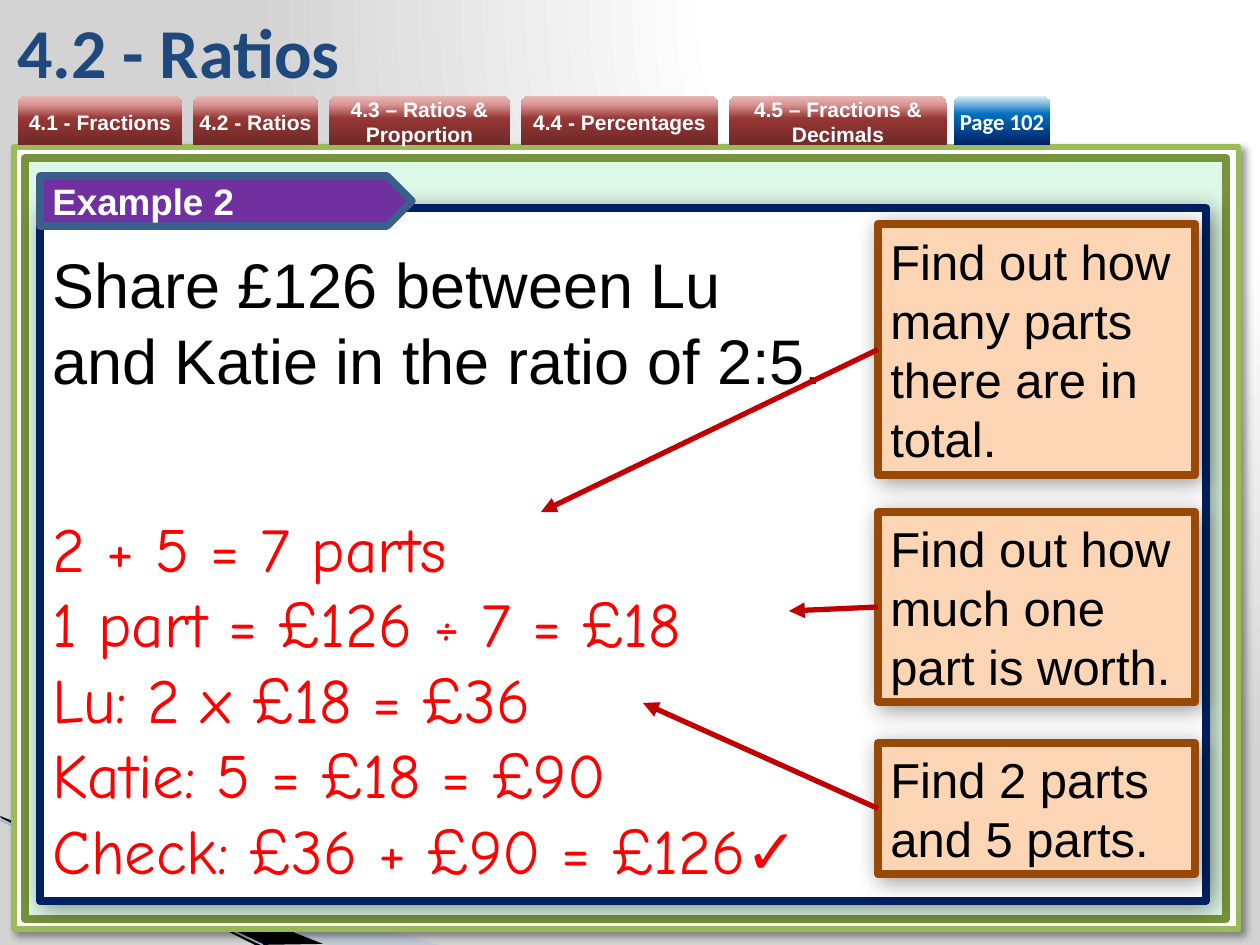
import lxml.etree
import pptx
import pptx.dml.color
import pptx.enum.shapes
import pptx.enum.text
import pptx.oxml
import pptx.oxml.ns
import pptx.util

SCALE = 914400 / 126
SHAPES = pptx.enum.shapes.MSO_SHAPE
ALIGN = pptx.enum.text.PP_ALIGN
ANCHOR = pptx.enum.text.MSO_ANCHOR
COLOURS = {
    "white": "FFFFFF", "black": "000000", "grey": "D3D3D3", "haze": "A7B9DB",
    "streak": "9EB3D6", "green": "9BBB59", "olive": "77933C", "mint": "DFF9E8",
    "title": "1F497D", "navy": "002060", "purple": "7030A0", "steel": "3A5F8C",
    "peach": "FCD5B5", "brown": "984807", "arrow": "C00000", "answer": "FF0000",
}
BACKGROUND_STOPS = [(0, "FFFFFF"), (40, "FFFFFF"), (100, "D3D3D3")]
TAB_STOPS = [(0, "6F2927"), (54, "953735"), (83, "D99694"), (100, "E6B9B8")]
PAGE_STOPS = [(0, "002060"), (63, "0070C0"), (100, "DBEEF4")]
UPWARD = '<a:lin ang="16200000" scaled="0"/>'
CORNER_GLOW = '<a:path path="circle"><a:fillToRect l="65000" t="0" r="0" b="98000"/></a:path>'
TABS = [("4.1 - Fractions", 164), ("4.2 - Ratios", 125), ("4.3 – Ratios & Proportion", 181),
        ("4.4 - Percentages", 197), ("4.5 – Fractions & Decimals", 218)]
TAB_LEFT, TAB_TOP, TAB_HEIGHT, TAB_GAP = 18, 96, 49, 11
QUESTION = "Share £126 between Lu\vand Katie in the ratio of 2:5."
WORKING = ["2 + 5 = 7 parts", "1 part = £126 ÷ 7 = £18", "Lu: 2 x £18 = £36",
           "Katie: 5 = £18 = £90", "Check: £36 + £90 = £126"]
CALLOUTS = [("Find out how many parts there are in total.", 224, 251, (541, 512)),
            ("Find out how much one part is worth.", 512, 190, (789, 611)),
            ("Find 2 parts and 5 parts.", 743, 131, (643, 703))]


def px(*values):
    """Turn pixel lengths into a list of EMU lengths."""
    return [pptx.util.Emu(round(value * SCALE)) for value in values]


def colour(name):
    """Look up a named colour."""
    return pptx.dml.color.RGBColor.from_string(COLOURS[name])


def xml(text):
    """Parse a DrawingML fragment whose root lacks its namespace."""
    head, tail = text.split(">", 1)
    return pptx.oxml.parse_xml(f"{head} {pptx.oxml.ns.nsdecls('a')}>{tail}")


def set_gradient(properties, stops, direction):
    """Replace the solid fill of a properties element by a gradient."""
    marks = "".join(f'<a:gs pos="{position * 1000}"><a:srgbClr val="{value}"/></a:gs>'
                    for position, value in stops)
    solid = properties.find(pptx.oxml.ns.qn("a:solidFill"))
    properties.replace(solid, xml(f"<a:gradFill><a:gsLst>{marks}</a:gsLst>{direction}</a:gradFill>"))


def set_shadow(shape, blur):
    """Give a shape a soft shadow to the lower right."""
    effects = shape._element.spPr.find(pptx.oxml.ns.qn("a:effectLst"))
    effects.append(xml(
        f'<a:outerShdw blurRad="{blur * 12700}" dist="38100" dir="2700000" algn="tl" rotWithShape="0">'
        f'<a:srgbClr val="{COLOURS["black"]}"><a:alpha val="40000"/></a:srgbClr></a:outerShdw>'))


def style_shape(shape, fill, line=None, width=4.33):
    """Set the fill and outline of a shape without the theme shadow."""
    shape.shadow.inherit = False
    shape.fill.solid()
    shape.fill.fore_color.rgb = colour(fill)
    if line:
        shape.line.color.rgb = colour(line)
        shape.line.width = pptx.util.Pt(width)
    else:
        shape.line.fill.background()


def add_block(slide, kind, box, fill, line=None, width=4.33, blur=0):
    """Add a filled preset shape."""
    shape = slide.shapes.add_shape(kind, *px(*box))
    style_shape(shape, fill, line, width)
    if blur:
        set_shadow(shape, blur)
    return shape


def style_paragraph(paragraph, font, size, ink, bold=False, align=ALIGN.LEFT):
    """Set the alignment and font of a paragraph."""
    paragraph.alignment = align
    paragraph.font.name = font
    paragraph.font.size = pptx.util.Pt(size)
    paragraph.font.bold = bold
    paragraph.font.color.rgb = colour(ink)


def write_text(shape, text, font, size, ink, bold=False, align=ALIGN.LEFT, anchor=ANCHOR.MIDDLE):
    """Write one paragraph into a shape."""
    frame = shape.text_frame
    frame.word_wrap = True
    frame.vertical_anchor = anchor
    frame.paragraphs[0].text = text
    style_paragraph(frame.paragraphs[0], font, size, ink, bold, align)


def add_line(slide, start, end, ink, width):
    """Add a straight line."""
    line = slide.shapes.add_connector(pptx.enum.shapes.MSO_CONNECTOR.STRAIGHT, *px(*start, *end))
    line.line.color.rgb = colour(ink)
    line.line.width = pptx.util.Pt(width)
    lxml.etree.SubElement(line._element.spPr, pptx.oxml.ns.qn("a:effectLst"))
    return line


def add_sliver(slide, points, fill):
    """Add a thin decorative outline in the lower left corner."""
    builder = slide.shapes.build_freeform(*points[0], scale=SCALE)
    builder.add_line_segments(points[1:], close=True)
    shape = builder.convert_to_shape()
    style_shape(shape, fill)
    return shape


def add_backdrop(slide):
    """Draw the background, the corner decoration and the two frames."""
    slide.background.fill.solid()
    properties = slide.element.find(".//" + pptx.oxml.ns.qn("p:bgPr"))
    set_gradient(properties, BACKGROUND_STOPS, CORNER_GLOW)
    haze = add_sliver(slide, [(0, 819), (440, 945), (326, 945), (0, 818)], "haze")
    haze_colour = haze._element.spPr.find(".//" + pptx.oxml.ns.qn("a:srgbClr"))
    haze_colour.append(xml('<a:alpha val="40000"></a:alpha>'))
    add_sliver(slide, [(0, 816), (323, 944), (255, 945), (1, 818)], "black")
    add_line(slide, (0, 820), (263, 945), "streak", 1)
    add_block(slide, SHAPES.RECTANGLE, (14, 147, 1225, 782), "white", "green", 3, blur=4)
    add_block(slide, SHAPES.RECTANGLE, (25, 158, 1201, 761), "mint", "olive")


def add_tab(slide, text, left, width, stops, font="Arial", size=12):
    """Add one navigation tab."""
    tab = add_block(slide, SHAPES.ROUND_2_SAME_RECTANGLE, (left, TAB_TOP, width, TAB_HEIGHT), "white")
    set_gradient(tab._element.spPr, stops, UPWARD)
    frame = tab.text_frame
    frame.margin_left = frame.margin_right = frame.margin_top = frame.margin_bottom = 0
    write_text(tab, text, font, size, "white", True, ALIGN.CENTER)


def add_example(slide):
    """Add the example panel with its question, working and label."""
    panel = add_block(slide, SHAPES.RECTANGLE, (40, 208, 1166, 693), "white", "navy", blur=13)
    panel.text_frame.margin_top = px(38)[0]
    write_text(panel, QUESTION, "Arial", 36, "black", anchor=ANCHOR.TOP)
    for index, step in enumerate(WORKING):
        paragraph = panel.text_frame.add_paragraph()
        paragraph.text = step
        style_paragraph(paragraph, "Comic Neue", 36, "answer")
        if index == 0:
            paragraph.space_before = pptx.util.Pt(64)
    tick = paragraph.add_run()
    tick.text = "✓"
    tick.font.bold = True
    label = add_block(slide, SHAPES.PENTAGON, (40, 176, 372, 50), "purple", "steel")
    write_text(label, "Example 2", "Arial", 21, "white", True)


def add_callouts(slide):
    """Add the hint boxes and their arrows."""
    boxes = []
    for text, top, height, target in CALLOUTS:
        box = add_block(slide, SHAPES.RECTANGLE, (878, top, 317, height), "peach", "brown", blur=13)
        write_text(box, text, "Arial", 28, "black")
        boxes.append((box, (878, top + height // 2), target))
    for box, start, target in boxes:
        arrow = add_line(slide, start, target, "arrow", 3)
        arrow.begin_connect(box, 1)
        arrow.line._get_or_add_ln().append(xml('<a:tailEnd type="triangle"></a:tailEnd>'))


def main():
    """Build the slide and save it."""
    presentation = pptx.Presentation()
    presentation.slide_width, presentation.slide_height = px(1260, 945)
    slide = presentation.slides.add_slide(presentation.slide_layouts[6])
    add_backdrop(slide)
    left = TAB_LEFT
    for text, width in TABS:
        add_tab(slide, text, left, width, TAB_STOPS)
        left += width + TAB_GAP
    title = slide.shapes.add_textbox(*px(5, 6, 1042, 89))
    write_text(title, "4.2 - Ratios", "Calibri", 40, "title", True)
    add_tab(slide, "Page 102", 954, 96, PAGE_STOPS, "Calibri", 13)
    add_example(slide)
    add_callouts(slide)
    presentation.save("out.pptx")


if __name__ == "__main__":
    main()
